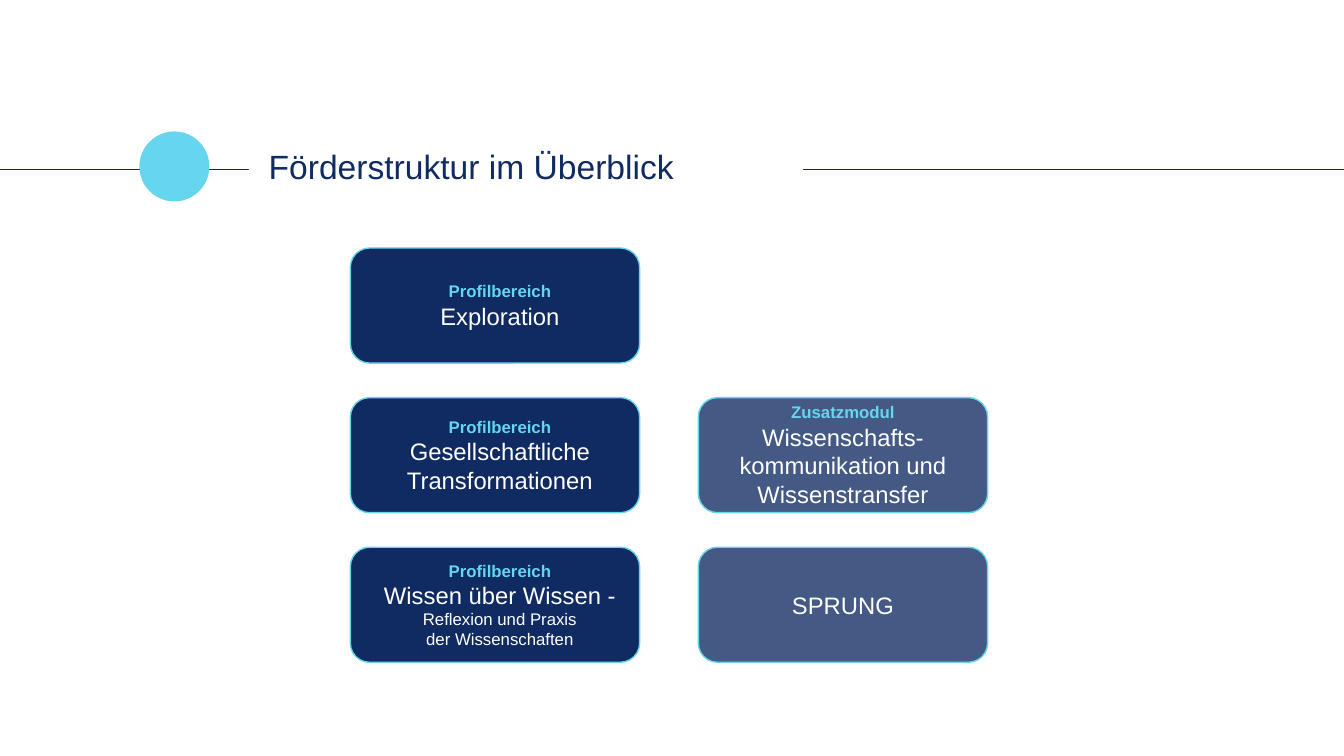
from dataclasses import dataclass

from lxml.etree import SubElement
from pptx import Presentation
from pptx.dml.color import RGBColor
from pptx.enum.shapes import MSO_CONNECTOR as Connector, MSO_SHAPE as Shape
from pptx.enum.text import MSO_ANCHOR as Anchor, MSO_AUTO_SIZE as AutoSize, PP_ALIGN as Align
from pptx.oxml.ns import qn
from pptx.util import Cm, Pt

# Content: column, row, lines as (style, text)
TITLE = "Förderstruktur im Überblick"
MODULES = [
    (0, 0, [("label", "Profilbereich"), ("name", "Exploration")]),
    (0, 1, [("label", "Profilbereich"), ("name", "Gesellschaftliche"),
            ("name", "Transformationen")]),
    (0, 2, [("label", "Profilbereich"), ("name", "Wissen über Wissen -"),
            ("detail", "Reflexion und Praxis"), ("detail", "der Wissenschaften")]),
    (1, 1, [("label", "Zusatzmodul"),
            ("name", "Wissenschafts-kommunikation und Wissenstransfer")]),
    (1, 2, [("name", "SPRUNG")]),
]


@dataclass(frozen=True)
class Theme:
    font: str = "Arial"
    navy: RGBColor = RGBColor(0x10, 0x2B, 0x61)
    cyan: RGBColor = RGBColor(0x66, 0xD6, 0xEE)
    white: RGBColor = RGBColor(0xFF, 0xFF, 0xFF)
    title_size: int = 24
    name_size: int = 17
    small_size: int = 12
    extra_opacity: int = 78


THEME = Theme()
LINE_STYLES = {  # size, colour, bold
    "label": (THEME.small_size, THEME.cyan, True),
    "name": (THEME.name_size, THEME.white, False),
    "detail": (THEME.small_size, THEME.white, False),
}

# Geometry in centimetres
PAGE_WIDTH, PAGE_HEIGHT = 33.87, 19.05
RULE_TOP = 4.27
BOX_WIDTH, BOX_HEIGHT = 7.29, 2.9
GRID_LEFT, GRID_TOP = 8.83, 6.25
COLUMN_STEP, ROW_STEP = 8.77, 3.77


def set_font(para, size, color, bold=False):
    para.font.name = THEME.font
    para.font.size = Pt(size)
    para.font.bold = bold
    para.font.color.rgb = color


def add_filled(page, kind, left, top, width, height, fill):
    shape = page.shapes.add_shape(kind, Cm(left), Cm(top), Cm(width), Cm(height))
    shape.shadow.inherit = False
    shape.fill.solid()
    shape.fill.fore_color.rgb = fill
    shape.line.color.rgb = THEME.cyan
    shape.line.width = Pt(1)
    return shape


def add_header(page):
    rule = page.shapes.add_connector(
        Connector.STRAIGHT, 0, Cm(RULE_TOP), Cm(PAGE_WIDTH), Cm(RULE_TOP))
    rule.line.color.rgb = THEME.navy
    rule.line.width = Pt(0.5)
    SubElement(rule._element.spPr, qn("a:effectLst"))
    add_filled(page, Shape.OVAL, 3.53, 3.33, 1.73, 1.73, THEME.cyan)

    # The white title box interrupts the rule, so it goes in front
    title = page.shapes.title
    title.left, title.top, title.width, title.height = Cm(6.27), Cm(3.3), Cm(13.97), Cm(1.85)
    title._element.getparent().append(title._element)
    title.fill.solid()
    title.fill.fore_color.rgb = THEME.white
    frame = title.text_frame
    frame.text = TITLE
    frame.word_wrap = True
    frame.auto_size = AutoSize.NONE
    frame.vertical_anchor = Anchor.TOP
    frame.margin_left = frame.margin_right = Cm(0.5)
    frame.margin_top = frame.margin_bottom = Cm(0.5)
    para = frame.paragraphs[0]
    para.alignment = Align.LEFT
    para.line_spacing = 0.9
    set_font(para, THEME.title_size, THEME.navy)


def add_module(page, column, row, lines):
    box = add_filled(page, Shape.ROUNDED_RECTANGLE,
                     GRID_LEFT + column * COLUMN_STEP, GRID_TOP + row * ROW_STEP,
                     BOX_WIDTH, BOX_HEIGHT, THEME.navy)
    frame = box.text_frame
    frame.word_wrap = True
    frame.vertical_anchor = Anchor.MIDDLE
    if column == 0:
        frame.margin_left = Cm(0.5)
    else:  # extra modules are translucent
        color = box.fill._xPr.find(qn("a:solidFill"))[0]
        SubElement(color, qn("a:alpha"), val=str(THEME.extra_opacity * 1000))
    for index, (style, text) in enumerate(lines):
        para = frame.add_paragraph() if index else frame.paragraphs[0]
        para.text = text
        para.alignment = Align.CENTER
        set_font(para, *LINE_STYLES[style])


def main():
    deck = Presentation()
    deck.slide_width, deck.slide_height = Cm(PAGE_WIDTH), Cm(PAGE_HEIGHT)
    page = deck.slides.add_slide(deck.slide_layouts[5])
    add_header(page)
    for module in MODULES:
        add_module(page, *module)
    deck.save("out.pptx")


if __name__ == "__main__":
    main()
